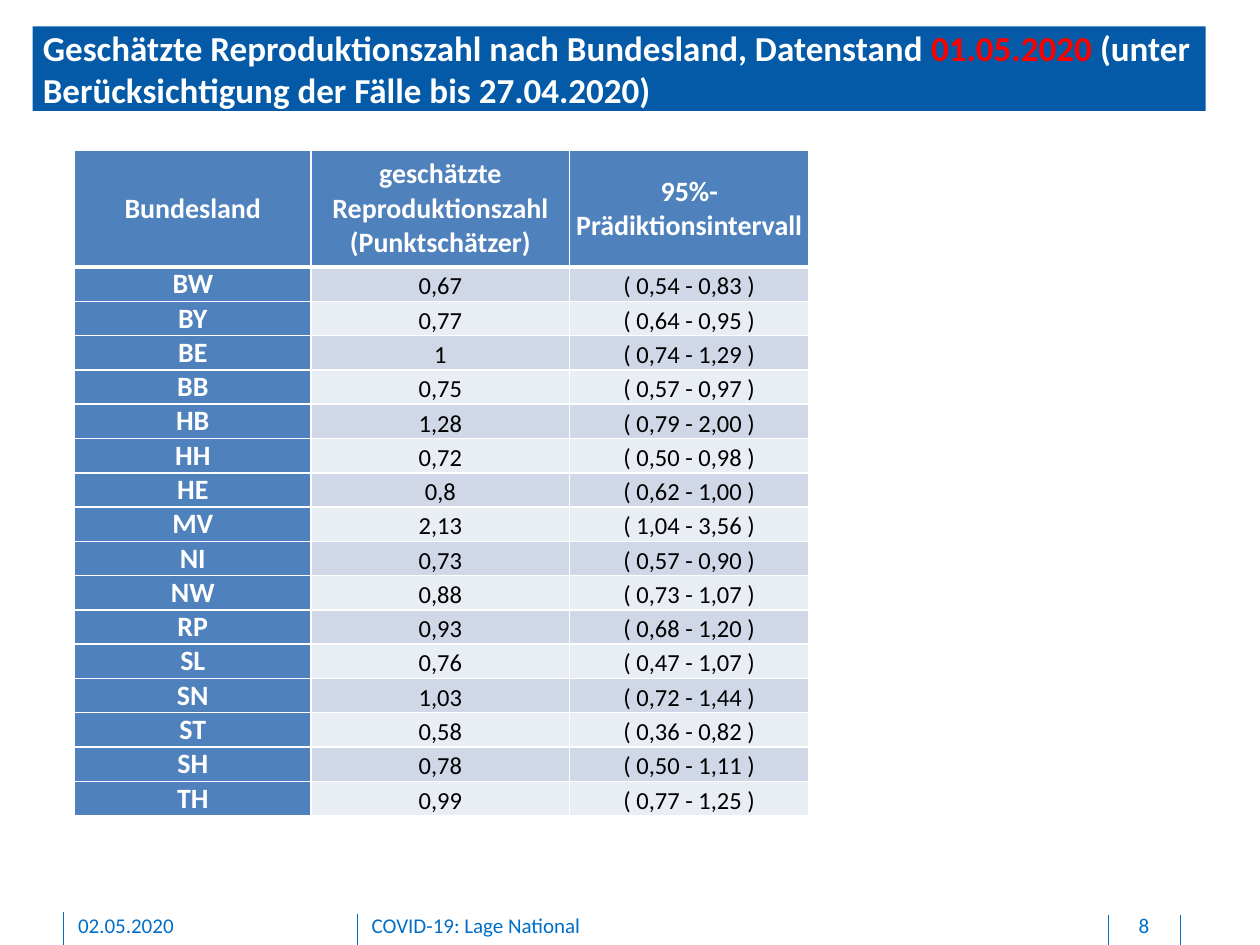
from dataclasses import dataclass

from lxml import etree
from pptx import Presentation
from pptx import util as u
from pptx.dml.color import RGBColor
from pptx.enum import text
from pptx.oxml import ns

WIDTH, HEIGHT = u.Inches(10), u.Inches(7.5)
FONT = "Calibri"
WHITE, RED, BLACK = "FFFFFF", "FF0000", "000000"
TITLE_BLUE, FOOTER_BLUE, HEADER_BLUE = "045AA6", "006EC7", "4F81BD"
BANDS = ("D0D8E8", "E9EDF4")
LEFT, CENTER = text.PP_ALIGN.LEFT, text.PP_ALIGN.CENTER
TOP, MIDDLE, BOTTOM = text.MSO_ANCHOR.TOP, text.MSO_ANCHOR.MIDDLE, text.MSO_ANCHOR.BOTTOM


@dataclass(frozen=True)
class Box:
    """Left, top, width and height in percent of the slide."""
    left: float
    top: float
    width: float
    height: float


@dataclass(frozen=True)
class CellStyle:
    size: int
    color: str
    bold: bool
    anchor: text.MSO_ANCHOR
    margins: tuple  # left, top, right, bottom in inches


@dataclass(frozen=True)
class FooterText:
    content: str
    left: float
    width: float
    alignment: text.PP_ALIGN


HEADING = CellStyle(16, WHITE, True, MIDDLE, (0.05, 0, 0.05, 0))
STATE = CellStyle(16, WHITE, True, BOTTOM, (0.05, 0, 0.05, 0))
VALUE = CellStyle(14, BLACK, False, BOTTOM, (0.01, 0.01, 0.01, 0))

TITLE_BOX = Box(2.6, 2.8, 93.1, 8.93)
TITLE_RUNS = (
    ("Geschätzte Reproduktionszahl nach Bundesland, Datenstand ", WHITE),
    ("01.05.2020 ", RED),
    ("(unter Berücksichtigung der Fälle bis 27.04.2020)", WHITE),
)

TABLE_BOX = Box(5.9, 15.87, 58.3, 69.33)
COLUMN_WIDTHS = (18.8, 20.5, 19)
HEADER_HEIGHT = 12.4
HEADINGS = ("Bundesland", "geschätzte Reproduktionszahl (Punktschätzer)",
            "95%-Prädiktionsintervall")
ESTIMATES = (
    ("BW", "0,67", "0,54 - 0,83"), ("BY", "0,77", "0,64 - 0,95"),
    ("BE", "1", "0,74 - 1,29"), ("BB", "0,75", "0,57 - 0,97"),
    ("HB", "1,28", "0,79 - 2,00"), ("HH", "0,72", "0,50 - 0,98"),
    ("HE", "0,8", "0,62 - 1,00"), ("MV", "2,13", "1,04 - 3,56"),
    ("NI", "0,73", "0,57 - 0,90"), ("NW", "0,88", "0,73 - 1,07"),
    ("RP", "0,93", "0,68 - 1,20"), ("SL", "0,76", "0,47 - 1,07"),
    ("SN", "1,03", "0,72 - 1,44"), ("ST", "0,58", "0,36 - 0,82"),
    ("SH", "0,78", "0,50 - 1,11"), ("TH", "0,99", "0,77 - 1,25"),
)

FOOTER_TOP, FOOTER_HEIGHT = 96.53, 2.8
FOOTER_TEXTS = (
    FooterText("02.05.2020", 6.2, 20.3, LEFT),
    FooterText("COVID-19: Lage National", 29.5, 56.7, LEFT),
    FooterText("8", 88.1, 5.4, CENTER),
)
DIVIDERS = ((5, 96.53), (28.4, 96.67), (88, 96.8), (93.7, 96.8))  # left, top


def across(share: float) -> int:
    return round(WIDTH * share / 100)


def down(share: float) -> int:
    return round(HEIGHT * share / 100)


def place(box: Box) -> tuple:
    return across(box.left), down(box.top), across(box.width), down(box.height)


def color(value: str) -> RGBColor:
    return RGBColor.from_string(value)


def apply(target, **formats) -> None:
    for name, value in formats.items():
        setattr(target, name, value)


def set_margins(target, margins: tuple) -> None:
    for side, margin in zip(("left", "top", "right", "bottom"), margins):
        setattr(target, f"margin_{side}", u.Inches(margin))


def set_font(font, size: int, value: str, bold: bool = False) -> None:
    apply(font, name=FONT, size=u.Pt(size), bold=bold)
    font.color.rgb = color(value)


def add_title(slide) -> None:
    title = slide.shapes.title
    title.left, title.top, title.width, title.height = place(TITLE_BOX)
    title.fill.solid()
    title.fill.fore_color.rgb = color(TITLE_BLUE)
    frame = title.text_frame
    apply(frame, word_wrap=True, auto_size=text.MSO_AUTO_SIZE.NONE, vertical_anchor=TOP)
    set_margins(frame, (0.08, 0, 0, 0))
    paragraph = frame.paragraphs[0]
    paragraph.alignment = LEFT
    for content, value in TITLE_RUNS:
        run = paragraph.add_run()
        run.text = content
        set_font(run.font, 20, value, True)


def add_borders(cell, top: float, bottom: float) -> None:
    properties = cell._tc.get_or_add_tcPr()
    for side, points in (("L", 1), ("R", 1), ("T", top), ("B", bottom)):
        line = etree.SubElement(properties, ns.qn(f"a:ln{side}"), w=str(u.Pt(points)))
        fill = etree.SubElement(line, ns.qn("a:solidFill"))
        etree.SubElement(fill, ns.qn("a:srgbClr"), val=WHITE)


def fill_cell(cell, content: str, style: CellStyle, background: str,
              top: float = 1, bottom: float = 1) -> None:
    add_borders(cell, top, bottom)
    cell.fill.solid()
    cell.fill.fore_color.rgb = color(background)
    cell.vertical_anchor = style.anchor
    set_margins(cell, style.margins)
    paragraph = cell.text_frame.paragraphs[0]
    paragraph.alignment = CENTER
    run = paragraph.add_run()
    run.text = content
    set_font(run.font, style.size, style.color, style.bold)


def add_estimates(slide) -> None:
    table = slide.shapes.add_table(
        len(ESTIMATES) + 1, len(HEADINGS), *place(TABLE_BOX)).table
    for column, width in zip(table.columns, COLUMN_WIDTHS):
        column.width = across(width)
    for row in table.rows:
        row.height = down((TABLE_BOX.height - HEADER_HEIGHT) / len(ESTIMATES))
    table.rows[0].height = down(HEADER_HEIGHT)

    for index, heading in enumerate(HEADINGS):
        fill_cell(table.cell(0, index), heading, HEADING, HEADER_BLUE, bottom=3)
    for index, (state, estimate, interval) in enumerate(ESTIMATES, start=1):
        band = BANDS[(index - 1) % 2]
        top = 3 if index == 1 else 1
        fill_cell(table.cell(index, 0), state, STATE, HEADER_BLUE, top)
        fill_cell(table.cell(index, 1), estimate, VALUE, band, top)
        fill_cell(table.cell(index, 2), f"( {interval} )", VALUE, band, top)


def add_divider(slide, left: float, top: float) -> None:
    x = across(left)
    line = slide.shapes.add_connector(1, x, down(top), x, HEIGHT)
    line.line.width = u.Pt(0.5)
    line.line.color.rgb = color(FOOTER_BLUE)
    etree.SubElement(line._element.spPr, ns.qn("a:effectLst"))


def add_footer_text(slide, item: FooterText) -> None:
    box = Box(item.left, FOOTER_TOP, item.width, FOOTER_HEIGHT)
    frame = slide.shapes.add_textbox(*place(box)).text_frame
    apply(frame, word_wrap=True, vertical_anchor=TOP)
    set_margins(frame, (0, 0, 0, 0.05))
    paragraph = frame.paragraphs[0]
    apply(paragraph, text=item.content, alignment=item.alignment)
    set_font(paragraph.runs[0].font, 12, FOOTER_BLUE)


def main() -> None:
    presentation = Presentation()
    apply(presentation, slide_width=WIDTH, slide_height=HEIGHT)
    slide = presentation.slides.add_slide(presentation.slide_layouts[5])
    # Title and table
    add_title(slide)
    add_estimates(slide)
    # Footer
    for left, top in DIVIDERS:
        add_divider(slide, left, top)
    for item in FOOTER_TEXTS:
        add_footer_text(slide, item)
    presentation.save("out.pptx")


if __name__ == "__main__":
    main()
